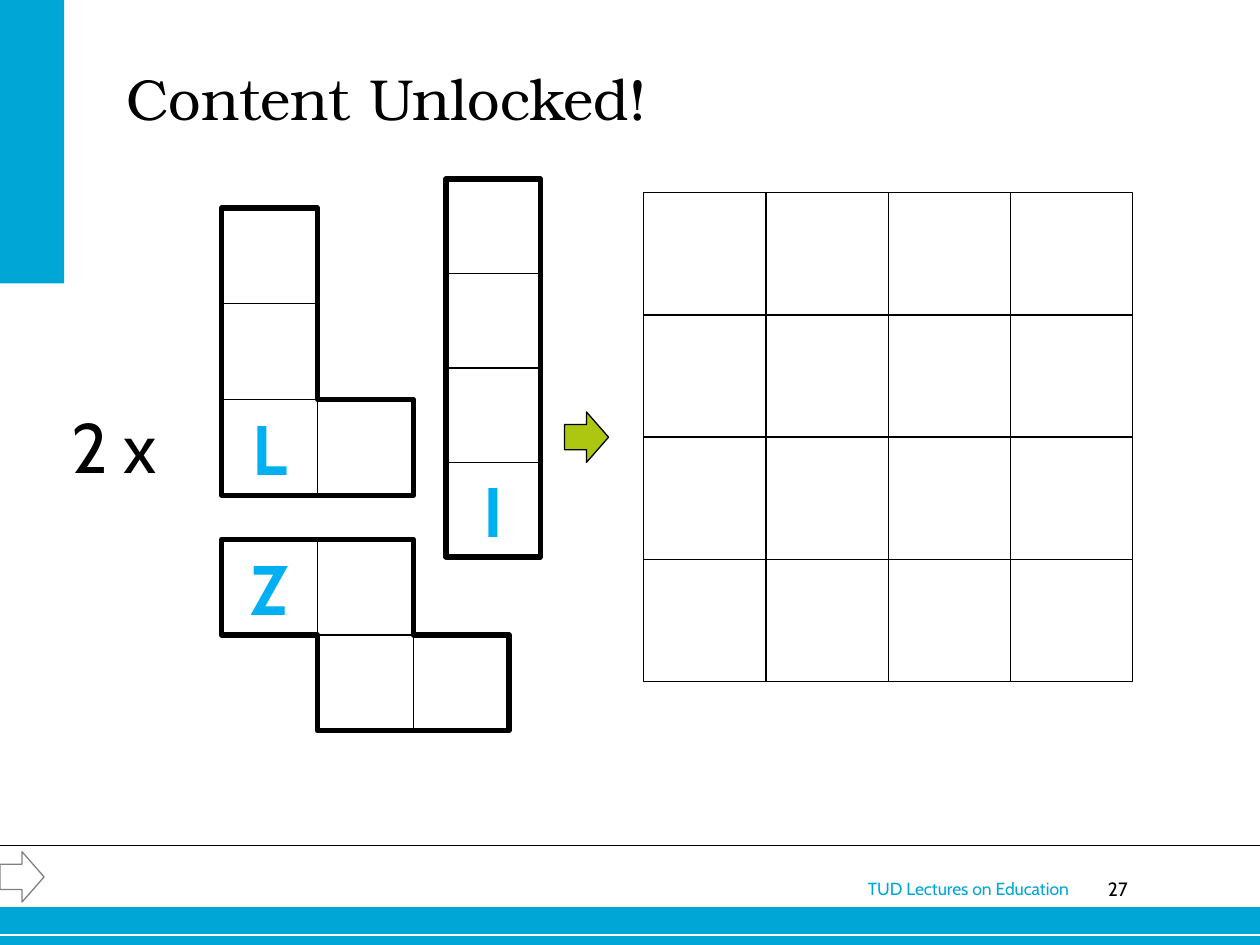
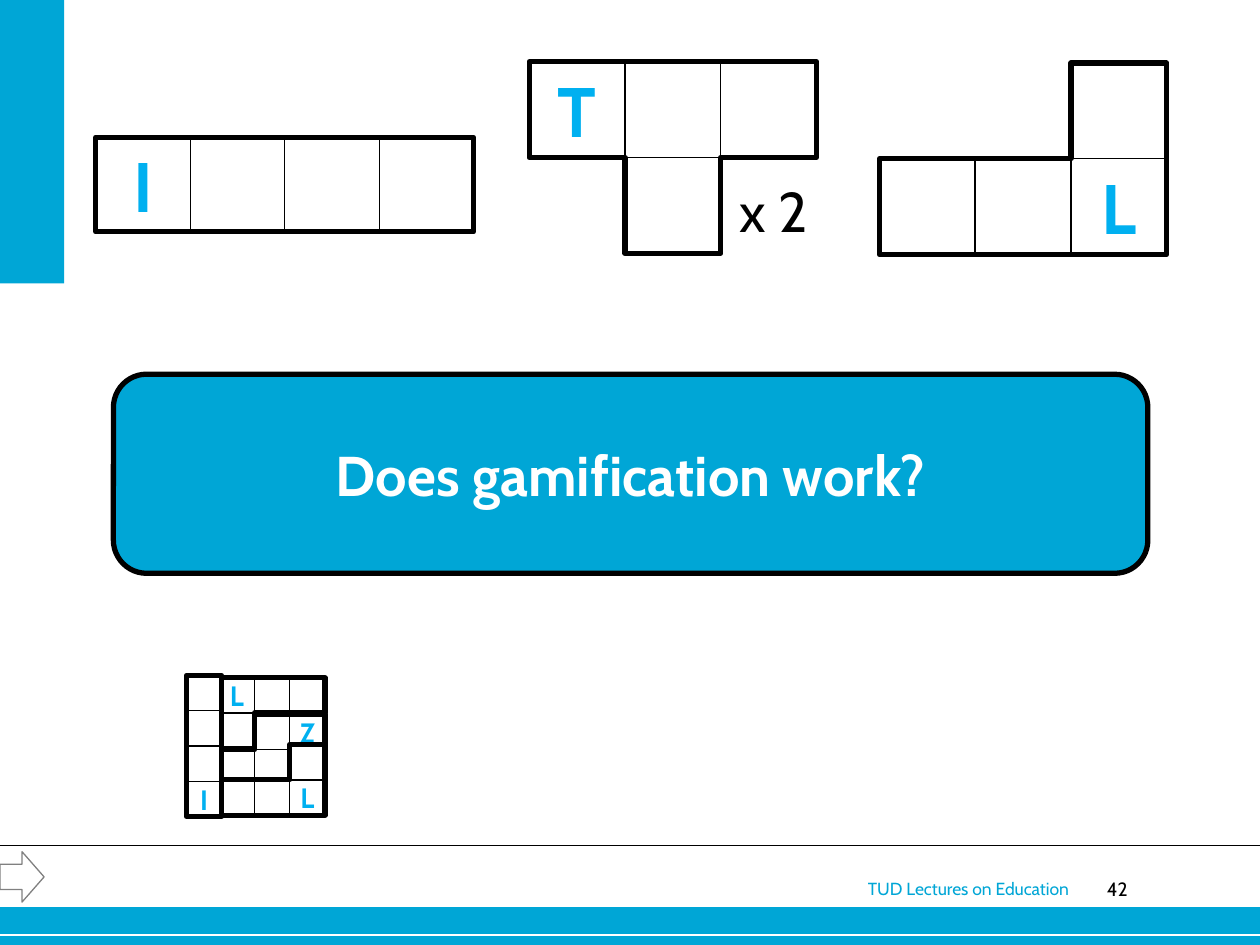
from lxml import etree
from pptx import Presentation
from pptx.dml.color import RGBColor
from pptx.enum.shapes import MSO_CONNECTOR, MSO_SHAPE as Shape
from pptx.enum.text import MSO_ANCHOR as Anchor, PP_ALIGN as Align
from pptx.oxml.ns import qn
from pptx.util import Inches, Pt

COLOURS = {"band": "00A6D6", "letter": "00B0F0", "arrow": "ADC610",
           "grey": "808080", "black": "000000", "white": "FFFFFF"}
BODY_FONT, TITLE_FONT = "Cabin", "TeX Gyre Bonum"

# Cells by row (a letter marks the labelled cell), then outline corners in cells
PIECES = {
    "I upright": (["#", "#", "#", "I"], [(0, 0), (1, 0), (1, 4), (0, 4)]),
    "I lying": (["I###"], [(0, 0), (4, 0), (4, 1), (0, 1)]),
    "L upright": (["#.", "#.", "L#"],
                  [(0, 0), (1, 0), (1, 2), (2, 2), (2, 3), (0, 3)]),
    "L hanging": (["L##", "#.."],
                  [(0, 0), (3, 0), (3, 1), (1, 1), (1, 2), (0, 2)]),
    "L lying": (["..#", "##L"],
                [(2, 0), (3, 0), (3, 2), (0, 2), (0, 1), (2, 1)]),
    "Z": (["Z#.", ".##"],
          [(0, 0), (2, 0), (2, 1), (3, 1), (3, 2), (1, 2), (1, 1), (0, 1)]),
    "Z mirrored": ([".#Z", "##."],
                   [(1, 0), (3, 0), (3, 1), (2, 1), (2, 2), (0, 2), (0, 1), (1, 1)]),
    "T": (["T##", ".#."],
          [(0, 0), (3, 0), (3, 1), (2, 1), (2, 2), (1, 2), (1, 1), (0, 1)]),
}

# Per slide: layout, page number, and pieces as (name, left, top, cell, letter size)
TITLE_ONLY, BLANK = 5, 6
PAGES = [
    (TITLE_ONLY, "27", [("L upright", 1.76, 1.65, 0.76, 40),
                        ("Z", 1.76, 4.28, 0.76, 40),
                        ("I upright", 3.54, 1.42, 0.75, 40)]),
    (BLANK, "42", [("L hanging", 1.74, 5.38, 0.28, 16),
                   ("Z mirrored", 1.74, 5.67, 0.28, 16),
                   ("L lying", 1.74, 5.91, 0.28, 16),
                   ("I upright", 1.48, 5.36, 0.28, 16),
                   ("T", 4.2, 0.49, 0.76, 40),
                   ("I lying", 0.76, 1.09, 0.75, 40),
                   ("L lying", 6.98, 0.5, 0.76, 40)]),
]


def add_block(shapes, kind, box, fill, line=None, width=0.75):
    block = shapes.add_shape(kind, *map(Inches, box))
    block.shadow.inherit = False
    block.fill.solid()
    block.fill.fore_color.rgb = RGBColor.from_string(COLOURS[fill])
    if line:
        block.line.color.rgb = RGBColor.from_string(COLOURS[line])
        block.line.width = Pt(width)
    else:
        block.line.fill.background()
    return block


def write(holder, words, size, colour="black", bold=False, align=Align.LEFT,
          anchor=Anchor.TOP, inset=True, wrap=True, font=BODY_FONT):
    """Put one formatted paragraph into a shape, text box or placeholder."""
    frame = holder.text_frame
    frame.word_wrap = wrap
    frame.vertical_anchor = anchor
    if not inset:
        frame.margin_left = frame.margin_right = 0
        frame.margin_top = frame.margin_bottom = 0
    paragraph = frame.paragraphs[0]
    paragraph.text = words
    paragraph.alignment = align
    paragraph.font.name = font
    paragraph.font.size = Pt(size)
    paragraph.font.bold = bold
    paragraph.font.color.rgb = RGBColor.from_string(COLOURS[colour])


deck = Presentation()
deck.slide_width, deck.slide_height = Inches(10), Inches(7.5)

for layout, number, pieces in PAGES:
    shapes = deck.slides.add_slide(deck.slide_layouts[layout]).shapes

    # Bands, rules and footer
    add_block(shapes, Shape.RECTANGLE, (0, 7.2, 10, 0.3), "band")
    add_block(shapes, Shape.RECTANGLE, (0, 0, 0.51, 2.25), "band")
    for y, colour, width in [(7.42, "white", 0.75), (6.71, "black", 1)]:
        rule = shapes.add_connector(MSO_CONNECTOR.STRAIGHT, 0, Inches(y),
                                    Inches(10), Inches(y))
        rule.line.color.rgb = RGBColor.from_string(COLOURS[colour])
        rule.line.width = Pt(width)
        etree.SubElement(rule._element.spPr, qn("a:effectLst"))
    page_number = shapes.add_textbox(*map(Inches, (8.46, 6.96, 0.49, 0.28)))
    write(page_number, number, 11, align=Align.RIGHT, inset=False)
    footer = shapes.add_textbox(*map(Inches, (6.79, 6.92, 2.09, 0.27)))
    write(footer, "TUD Lectures on Education", 10, "band")
    add_block(shapes, Shape.RIGHT_ARROW, (0, 6.76, 0.35, 0.4), "white", "grey")

    # Puzzle pieces: cells, heavy outline, letter
    for name, left, top, cell, letter_size in pieces:
        rows, corners = PIECES[name]
        piece = shapes.add_group_shape().shapes
        for r, row in enumerate(rows):
            for c, mark in enumerate(row):
                if mark == ".":
                    continue
                box = (left + c * cell, top + r * cell, cell, cell)
                add_block(piece, Shape.RECTANGLE, box, "white", "black")
                if mark != "#":
                    letter, letter_box = mark, box
        points = [(Inches(left + x * cell), Inches(top + y * cell))
                  for x, y in corners]
        builder = piece.build_freeform(*points[0])
        builder.add_line_segments(points[1:], close=True)
        outline = builder.convert_to_shape()
        outline.shadow.inherit = False
        outline.fill.background()
        outline.line.color.rgb = RGBColor.from_string(COLOURS["black"])
        outline.line.width = Pt(3)
        label = piece.add_textbox(*map(Inches, letter_box))
        write(label, letter, letter_size, "letter", True, Align.CENTER,
              Anchor.MIDDLE, inset=False, wrap=False)

unlocked, question = deck.slides

# Slide 1: title, piece count and the empty board
title = unlocked.shapes.title
title.left, title.top, title.width, title.height = map(Inches, (1, 0.5, 7.83, 1.17))
write(title, "Content Unlocked!", 33, inset=False, font=TITLE_FONT)
board = unlocked.shapes.add_group_shape().shapes
for row in range(4):
    for column in range(4):
        add_block(board, Shape.RECTANGLE,
                  (5.11 + column * 0.97, 1.53 + row * 0.97, 0.97, 0.97),
                  "white", "black")
add_block(unlocked.shapes, Shape.RIGHT_ARROW, (4.48, 3.27, 0.35, 0.4), "arrow", "black")
l_count = unlocked.shapes.add_textbox(*map(Inches, (0.47, 3.15, 1.1, 0.77)))
write(l_count, "2 x", 40)

# Slide 2: the question and the count of T pieces
banner = add_block(question.shapes, Shape.ROUNDED_RECTANGLE,
                   (0.9, 2.97, 8.21, 1.58), "band", "black", 3)
write(banner, "Does gamification work?", 32, "white", True, Align.CENTER,
      Anchor.MIDDLE, wrap=False)
t_count = question.shapes.add_textbox(*map(Inches, (5.77, 1.35, 0.88, 0.64)))
write(t_count, "x 2", 32)

deck.save("out.pptx")
